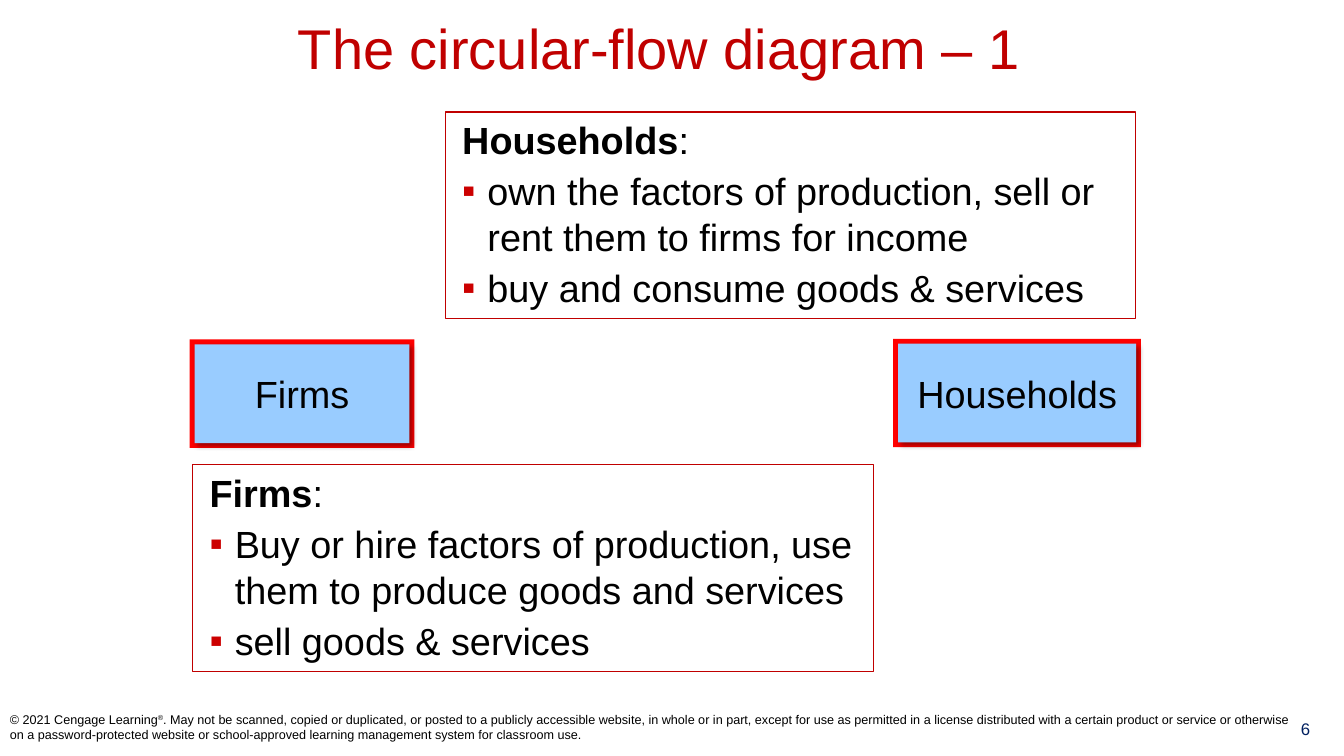
"""Build the slide introducing firms and households in the circular-flow diagram."""
from lxml import etree
from pptx import Presentation
from pptx.dml.color import RGBColor
from pptx.enum.shapes import MSO_SHAPE
from pptx.enum.text import MSO_ANCHOR, MSO_AUTO_SIZE, PP_ALIGN
from pptx.oxml import parse_xml
from pptx.oxml.ns import nsdecls, qn
from pptx.util import Pt

RECTANGLE = MSO_SHAPE.RECTANGLE
TOP, MIDDLE = MSO_ANCHOR.TOP, MSO_ANCHOR.MIDDLE
LEFT, CENTER = PP_ALIGN.LEFT, PP_ALIGN.CENTER
NO_FIT = MSO_AUTO_SIZE.NONE

COLORS = {
    "title": "C00000", "bullet": "CC0000", "frame": "FF0000", "node": "99CCFF",
    "text": "000000", "number": "002060",
}
BODY_SIZE = 27
FRAME_WIDTH = 3.5


def add_run(paragraph, text, size, color="text", bold=False):
    run = paragraph.add_run()
    run.text = text
    run.font.name = "Arial"
    run.font.size = Pt(size)
    run.font.bold = bold
    run.font.color.rgb = RGBColor.from_string(COLORS[color])
    return run


def add_rectangle(left, top, width, height, color):
    shape = slide.shapes.add_shape(RECTANGLE, Pt(left), Pt(top), Pt(width), Pt(height))
    shape.shadow.inherit = False
    shape.fill.solid()
    shape.fill.fore_color.rgb = RGBColor.from_string(COLORS[color])
    shape.line.fill.background()
    return shape


presentation = Presentation()
presentation.slide_width, presentation.slide_height = Pt(960), Pt(540)
slide = presentation.slides.add_slide(presentation.slide_layouts[3])

title = slide.shapes.title
title.left, title.top, title.width, title.height = Pt(8), Pt(8), Pt(936), Pt(52)
title.text_frame.word_wrap = False
title.text_frame.auto_size = NO_FIT
title.text_frame.vertical_anchor = MIDDLE
title_paragraph = title.text_frame.paragraphs[0]
title_paragraph.alignment = CENTER
add_run(title_paragraph, "The circular-flow diagram – 1 ", 40, "title")

role_lists = [
    (1, 318, 80, 493, "Households", [
        "own the factors of production, sell or rent them to firms for income",
        "buy and consume goods & services"]),
    (2, 137.5, 332, 486.5, "Firms", [
        "Buy or hire factors of production, use them to produce goods and services",
        "sell goods & services"]),
]
for index, left, top, width, heading, roles in role_lists:
    body = slide.placeholders[index]
    body.left, body.top, body.width, body.height = Pt(left), Pt(top), Pt(width), Pt(147.6)
    body.line.color.rgb = RGBColor.from_string(COLORS["title"])
    body.line.width = Pt(0.75)
    frame = body.text_frame
    frame.word_wrap = True
    frame.auto_size = NO_FIT
    frame.vertical_anchor = TOP
    for number, text in enumerate([heading] + roles):
        paragraph = frame.add_paragraph() if number else frame.paragraphs[0]
        properties = paragraph._p.get_or_add_pPr()
        properties.set("marL", str(Pt(23)))
        properties.set("indent", str(Pt(-18)))
        if number:
            bullet_color = etree.SubElement(properties, qn("a:buClr"))
            etree.SubElement(bullet_color, qn("a:srgbClr"), val=COLORS["bullet"])
            etree.SubElement(properties, qn("a:buFont"), typeface="Arial")
            etree.SubElement(properties, qn("a:buChar"), char="▪")
        else:
            etree.SubElement(properties, qn("a:buNone"))
        paragraph.alignment = LEFT
        paragraph.line_spacing = 1.0
        paragraph.space_before = Pt(4 if number else 0)
        add_run(paragraph, text, BODY_SIZE, bold=number == 0)
        if number == 0:
            add_run(paragraph, ":", BODY_SIZE)

nodes = [("Firms", 135.5, 242.5, 160.5), ("Households", 638, 242, 177)]
for name, left, top, width in nodes:
    add_rectangle(left, top, width, 77.5, "frame")
    node = add_rectangle(left + FRAME_WIDTH, top + FRAME_WIDTH,
                         width - 2 * FRAME_WIDTH, 77.5 - 2 * FRAME_WIDTH, "node")
    effects = node._element.spPr.find(qn("a:effectLst"))
    effects.append(parse_xml(
        f'<a:outerShdw {nsdecls("a")} blurRad="{Pt(4)}" dist="{Pt(3)}" dir="2700000" '
        f'algn="tl" rotWithShape="0"><a:srgbClr val="{COLORS["text"]}">'
        '<a:alpha val="40000"/></a:srgbClr></a:outerShdw>'))
    node.text_frame.vertical_anchor = MIDDLE
    node_paragraph = node.text_frame.paragraphs[0]
    node_paragraph.alignment = CENTER
    add_run(node_paragraph, name, BODY_SIZE)

copyright_box = slide.shapes.add_textbox(Pt(0), Pt(498), Pt(936), Pt(42))
copyright_box.text_frame.word_wrap = True
copyright_box.text_frame.vertical_anchor = MIDDLE
copyright_paragraph = copyright_box.text_frame.paragraphs[0]
add_run(copyright_paragraph, "© 2021 Cengage Learning", 9)
registered = add_run(copyright_paragraph, "®", 9)
registered._r.get_or_add_rPr().set("baseline", "30000")
add_run(copyright_paragraph,
        ". May not be scanned, copied or duplicated, or posted to a publicly accessible "
        "website, in whole or in part, except for use as permitted in a license distributed "
        "with a certain product or service or otherwise on a password-protected website or "
        "school-approved learning management system for classroom use.", 9)

number_box = slide.shapes.add_textbox(Pt(905), Pt(510), Pt(55), Pt(30))
number_box.text_frame.word_wrap = True
number_paragraph = number_box.text_frame.paragraphs[0]
number_paragraph.alignment = CENTER
add_run(number_paragraph, "6", 12, "number")

presentation.save("out.pptx")
